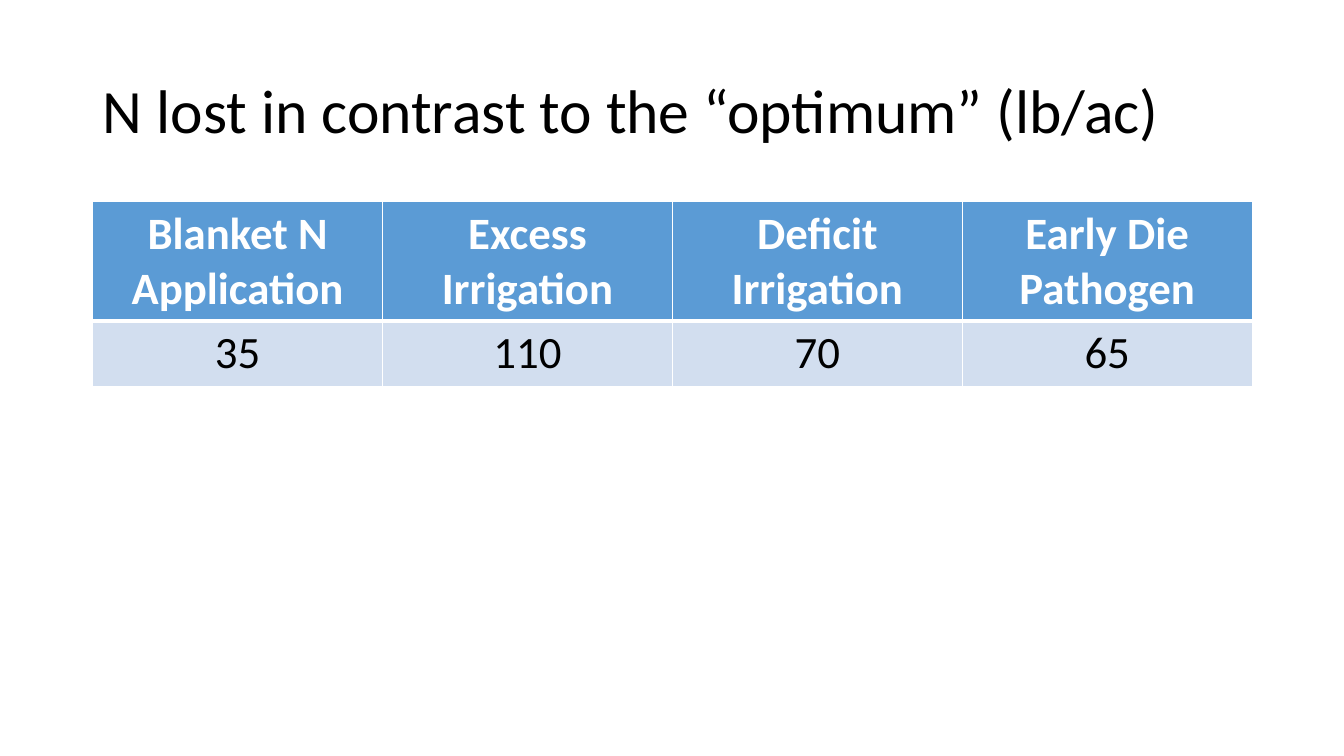
from lxml.etree import SubElement
from pptx import Presentation
from pptx.dml.color import RGBColor
from pptx.enum.text import MSO_ANCHOR, MSO_AUTO_SIZE, PP_ALIGN
from pptx.oxml.ns import qn
from pptx.util import Inches, Pt

COLORS = {
    "black": "000000",
    "white": "FFFFFF",
    "header": "5B9BD5",
    "body": "D2DEEF",
}
FONT = "Calibri"
LEFT, WIDTH = 0.92, 11.5
LOSSES = [
    ("Blanket N Application", "35"),
    ("Excess Irrigation", "110"),
    ("Deficit Irrigation", "70"),
    ("Early Die Pathogen", "65"),
]
ROW_HEIGHTS = (1.17, 0.63)


def rgb(name):
    """Return the named colour."""
    return RGBColor.from_string(COLORS[name])


def format_paragraph(paragraph, size, color, align, bold=False):
    """Set the alignment of a paragraph and the font of its runs."""
    paragraph.alignment = align
    for run in paragraph.runs:
        run.font.name = FONT
        run.font.size = Pt(size)
        run.font.bold = bold
        run.font.color.rgb = rgb(color)


def add_title(slide, text):
    """Fill and place the title placeholder."""
    title = slide.shapes.title
    title.left, title.top = Inches(LEFT), Inches(0.4)
    title.width, title.height = Inches(WIDTH), Inches(1.45)
    frame = title.text_frame
    frame.text = text
    frame.word_wrap = True
    frame.auto_size = MSO_AUTO_SIZE.NONE
    frame.vertical_anchor = MSO_ANCHOR.MIDDLE
    paragraph = frame.paragraphs[0]
    paragraph.line_spacing = 0.9
    format_paragraph(paragraph, 44, "black", PP_ALIGN.LEFT)


def set_borders(cell, widths):
    """Draw white cell borders, with widths in points by side."""
    properties = cell._tc.get_or_add_tcPr()
    for side, width in widths.items():
        line = SubElement(properties, qn(f"a:ln{side}"), w=str(Pt(width)))
        fill = SubElement(line, qn("a:solidFill"))
        SubElement(fill, qn("a:srgbClr"), val=COLORS["white"])


def format_cell(cell, text, is_header):
    """Write one table cell in the header or body style."""
    cell.text = text
    divider = 3
    set_borders(cell, {
        "L": 1,
        "R": 1,
        "T": 1 if is_header else divider,
        "B": divider if is_header else 1,
    })
    cell.fill.solid()
    cell.fill.fore_color.rgb = rgb("header" if is_header else "body")
    format_paragraph(cell.text_frame.paragraphs[0], 32,
                     "white" if is_header else "black",
                     PP_ALIGN.CENTER, is_header)


def add_loss_table(slide, losses):
    """Add a table with one column for each cause of nitrogen loss."""
    table = slide.shapes.add_table(
        len(ROW_HEIGHTS), len(losses), Inches(LEFT), Inches(2),
        Inches(WIDTH), Inches(sum(ROW_HEIGHTS))).table
    for row, height in zip(table.rows, ROW_HEIGHTS):
        row.height = Inches(height)
    for column, entries in enumerate(losses):
        for row, text in enumerate(entries):
            format_cell(table.cell(row, column), text, row == 0)


def main():
    """Build and save the slide."""
    presentation = Presentation()
    presentation.slide_width = Inches(13.33)
    presentation.slide_height = Inches(7.5)
    slide = presentation.slides.add_slide(presentation.slide_layouts[5])
    add_title(slide, "N lost in contrast to the “optimum” (lb/ac)")
    add_loss_table(slide, LOSSES)
    presentation.save("out.pptx")


if __name__ == "__main__":
    main()
